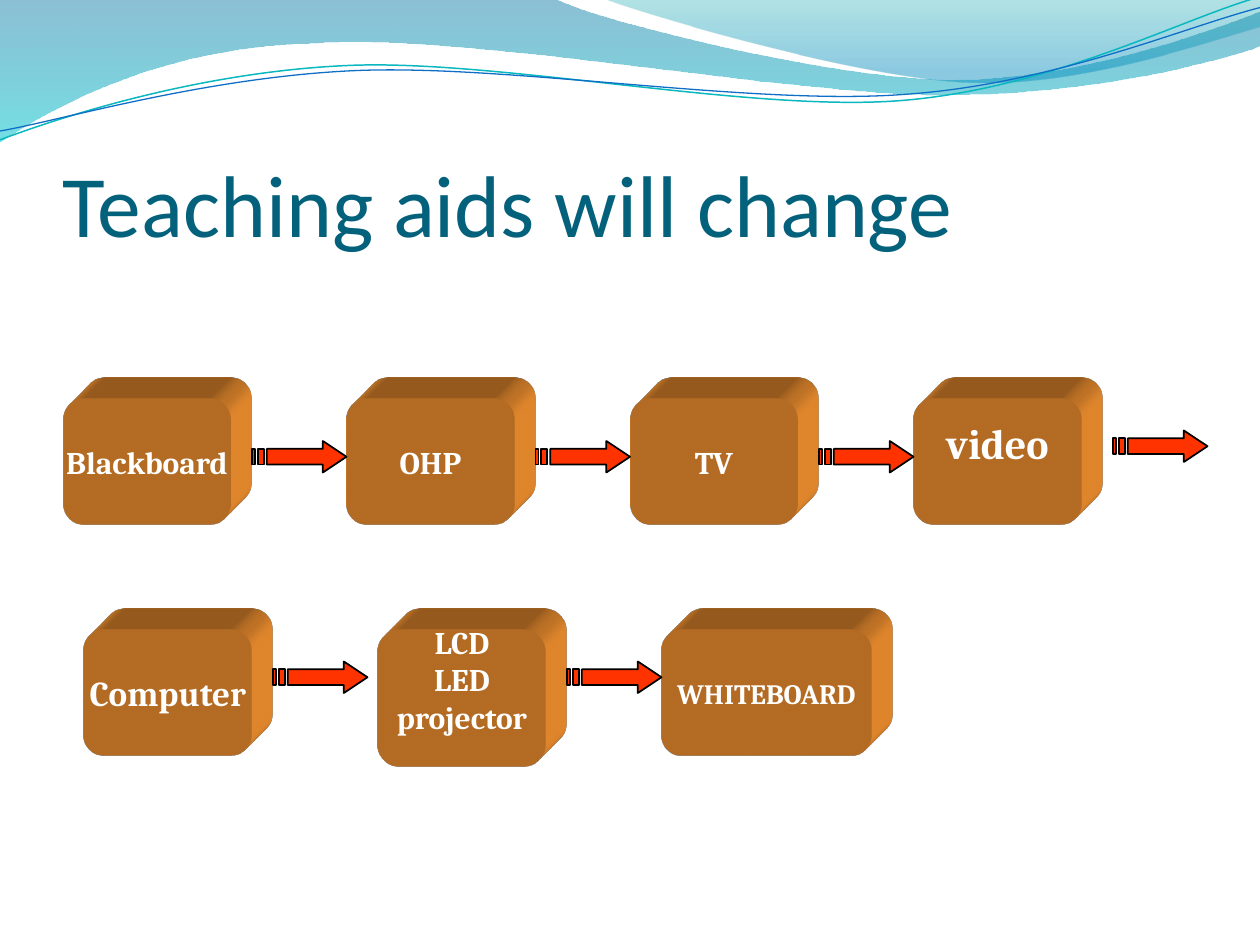
from dataclasses import dataclass
from math import cos, radians, sin
from typing import Optional

from lxml.etree import SubElement
from pptx import Presentation
from pptx.dml.color import RGBColor as RGB
from pptx.enum.shapes import MSO_SHAPE as SHAPE
from pptx.enum.text import MSO_ANCHOR as ANCHOR, PP_ALIGN as ALIGN
from pptx.oxml import parse_xml
from pptx.oxml.ns import qn
from pptx.util import Inches, Pt

UNIT = 1 / 12  # grid step in inches: 120 columns by 90 rows
A_NS = "http://schemas.openxmlformats.org/drawingml/2006/main"


@dataclass(frozen=True)
class Theme:
    title_font: str = "Calibri"
    box_font: str = "Cambria"
    title: str = "04617B"
    box: str = "FF9933"
    box_text: str = "FFFFFF"
    arrow: str = "FF3300"
    outline: str = "000000"
    title_size: int = 50
    box_size: int = 18


THEME = Theme()


@dataclass(frozen=True)
class Wave:
    """Outline in inches: pairs are points, six numbers are Bezier curves."""
    frame: tuple  # left, top, width, height
    points: tuple
    stops: tuple = ()  # (position, colour, opacity %)
    line: Optional[str] = None
    width: float = 0
    rotation: float = 0


@dataclass(frozen=True)
class Box:
    text: str
    col: int
    row: int
    cols: int = 16
    rows: int = 12
    size: int = THEME.box_size
    raise_text: float = 0  # extra bottom inset, inches


@dataclass(frozen=True)
class Arrow:
    col: int
    row: int


WAVES = (
    Wave((-0.01, -0.01, 10.02, 1.14),
         ((0, 0), (4.4, -0.01), (4.76, 0.17, 6.64, 0.63, 7.58, 0.63),
          (8.53, 0.63, 9.58, 0.26, 10, 0.09), (10.01, 0.36),
          (9.83, 0.44, 8.7, 0.76, 7.46, 0.75), (6.22, 0.75, 3.82, 0.28, 2.57, 0.34),
          (1.29, 0.36, 0.46, 0.83, -0.01, 1.13)),
         stops=((0, "0074A1", 45), (1, "00C6CF", 55))),
    Wave((4.79, -0.01, 5.21, 0.7),
         ((4.79, -0.01), (5.09, 0.11, 6.82, 0.62, 7.69, 0.65),
          (8.56, 0.69, 9.61, 0.32, 10, 0.21), (10, 0)),
         stops=((0, "00A1A9", 30), (0.8, "008BBF", 45))),
    Wave((-0.02, 0.22, 10.02, 0.71),
         ((0, 1.11), (0.48, 0.93, 1.58, 0.57, 2.77, 0.52),
          (3.95, 0.47, 5.93, 0.89, 7.13, 0.8), (8.33, 0.71, 9.38, 0.15, 9.98, -0.02)),
         line="0AB8BF", width=0.85, rotation=357.3),
    Wave((-0.02, 0.3, 10.03, 0.58),
         ((0, 1.04), (0.47, 0.96, 1.64, 0.61, 2.83, 0.56),
          (4.03, 0.51, 5.97, 0.84, 7.17, 0.75), (8.36, 0.67, 9.41, 0.21, 10, 0.06)),
         line="0F6FC6", width=0.75, rotation=357.3),
)

BOXES = (
    Box("Blackboard", 6, 38),
    Box("OHP", 33, 38),
    Box("TV", 60, 38),
    Box("video", 87, 38, size=24, raise_text=0.3),
    Box("Computer", 8, 60, size=20),
    Box("LCD\nLED\nprojector", 36, 60, rows=13, raise_text=0.3),
    Box("WHITEBOARD", 63, 60, cols=20, size=16),
)

ARROWS = (Arrow(24, 42), Arrow(51, 42), Arrow(78, 42),
          Arrow(106, 41), Arrow(26, 63), Arrow(54, 63))

# Arrow outlines in grid units: the body with its head, then two stripes
ARROW_PARTS = (
    ((6.75, 0), (6.75, 0.75), (1.41, 0.75), (1.41, 2.25), (6.75, 2.25), (6.75, 3), (9, 1.5)),
    ((0.56, 0.75), (0.56, 2.25), (1.13, 2.25), (1.13, 0.75)),
    ((0, 0.75), (0, 2.25), (0.28, 2.25), (0.28, 0.75)),
)


def grid(n: float) -> int:
    return Inches(n * UNIT)


def to_frame(x: float, y: float, wave: Wave) -> tuple:
    """Undo the wave's rotation and measure from its frame, in EMU."""
    left, top, width, height = wave.frame
    dx, dy = x - left - width / 2, y - top - height / 2
    c, n = cos(radians(-wave.rotation)), sin(radians(-wave.rotation))
    return Inches(dx * c - dy * n + width / 2), Inches(dx * n + dy * c + height / 2)


def add_wave(s, wave: Wave) -> None:
    ends = [(Inches(item[-2]), Inches(item[-1])) for item in wave.points]
    builder = s.shapes.build_freeform(*ends[0])
    builder.add_line_segments(ends[1:], close=bool(wave.stops))
    sp = builder.convert_to_shape()
    sp.left, sp.top, sp.width, sp.height = map(Inches, wave.frame)
    sp.rotation = wave.rotation
    sp.shadow.inherit = False
    # Replace the straight steps by Bezier curves
    outline = next(sp.element.iter(qn("a:path")))
    outline.set("w", str(sp.width))
    outline.set("h", str(sp.height))
    for step, item in zip(list(outline), wave.points):
        if len(item) == 6:
            step.tag = qn("a:cubicBezTo")
        for pt in list(step):
            step.remove(pt)
        for x, y in zip(item[::2], item[1::2]):
            px, py = to_frame(x, y, wave)
            SubElement(step, qn("a:pt"), x=str(px), y=str(py))
    if wave.line:
        sp.fill.background()
        sp.line.color.rgb = RGB.from_string(wave.line)
        sp.line.width = Pt(wave.width)
        return
    sp.line.fill.background()
    sp.fill.gradient()
    sp.fill.gradient_angle = 270
    for stop, (position, color, _) in zip(sp.fill.gradient_stops, wave.stops):
        stop.position = position
        stop.color.rgb = RGB.from_string(color)
    colors = sp.element.spPr.find(qn("a:gradFill")).iter(qn("a:srgbClr"))
    for clr, (_, _, opacity) in zip(colors, wave.stops):
        SubElement(clr, qn("a:alpha")).set("val", str(opacity * 1000))


def style_text(tf, font: str, size: int, color: str, bold: bool, align) -> None:
    for p in tf.paragraphs:
        p.alignment = align
        for r in p.runs:
            r.font.name, r.font.size, r.font.bold = font, Pt(size), bold
            r.font.color.rgb = RGB.from_string(color)


def add_box(s, box: Box) -> None:
    sp = s.shapes.add_shape(SHAPE.ROUNDED_RECTANGLE, grid(box.col), grid(box.row),
                            grid(box.cols), grid(box.rows))
    sp.shadow.inherit = False
    sp.fill.solid()
    sp.fill.fore_color.rgb = RGB.from_string(THEME.box)
    sp.line.fill.background()
    # Solid depth towards the top right
    for xml in (
        f'<a:scene3d xmlns:a="{A_NS}"><a:camera prst="legacyObliqueTopRight"/>'
        '<a:lightRig rig="legacyFlat3" dir="b"/></a:scene3d>',
        f'<a:sp3d xmlns:a="{A_NS}" extrusionH="430200" prstMaterial="legacyMatte">'
        f'<a:extrusionClr><a:srgbClr val="{THEME.box}"/></a:extrusionClr></a:sp3d>',
    ):
        sp.element.spPr.append(parse_xml(xml))
    tf = sp.text_frame
    tf.text = box.text
    tf.word_wrap = False
    tf.vertical_anchor = ANCHOR.MIDDLE
    tf.margin_bottom = Inches(0.05 + box.raise_text)
    style_text(tf, THEME.box_font, box.size, THEME.box_text, True, ALIGN.CENTER)


def add_arrow(s, arrow: Arrow) -> None:
    parts = [[(grid(arrow.col + x), grid(arrow.row + y)) for x, y in part]
             for part in ARROW_PARTS]
    builder = s.shapes.build_freeform(*parts[0][0])
    for i, (start, *rest) in enumerate(parts):
        if i:
            builder.move_to(*start)
        builder.add_line_segments(rest, close=True)
    sp = builder.convert_to_shape()
    sp.shadow.inherit = False
    sp.fill.solid()
    sp.fill.fore_color.rgb = RGB.from_string(THEME.arrow)
    sp.line.color.rgb = RGB.from_string(THEME.outline)
    sp.line.width = Pt(1)


def add_title(s, text: str) -> None:
    tf = s.shapes.add_textbox(Inches(0.5), Inches(0.77), Inches(9), Inches(1.25)).text_frame
    tf.text = text
    tf.word_wrap = True
    tf.vertical_anchor = ANCHOR.BOTTOM
    tf.margin_left = tf.margin_right = tf.margin_bottom = 0
    style_text(tf, THEME.title_font, THEME.title_size, THEME.title, False, ALIGN.LEFT)


prs = Presentation()
prs.slide_width, prs.slide_height = grid(120), grid(90)
s = prs.slides.add_slide(prs.slide_layouts[6])
# Header waves and title
for wave in WAVES:
    add_wave(s, wave)
add_title(s, "Teaching aids will change")
# Chain of teaching aids
for box in BOXES:
    add_box(s, box)
for arrow in ARROWS:
    add_arrow(s, arrow)
prs.save("out.pptx")
